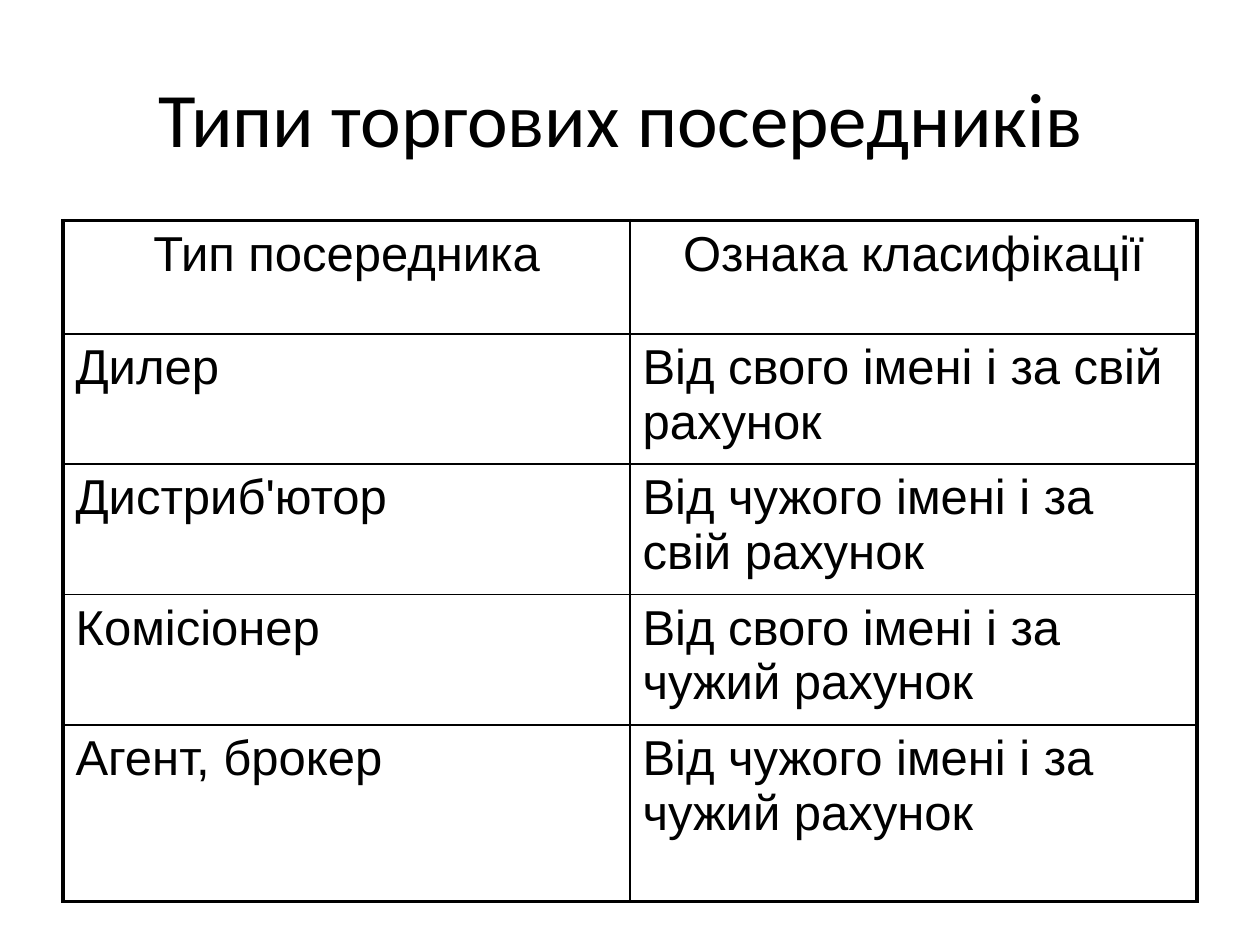
"""Build a slide with a table of trade intermediary types."""
from dataclasses import dataclass

from lxml import etree
from pptx import Presentation, util as u
from pptx.dml.color import RGBColor
from pptx.enum import text as t
from pptx.oxml import ns

WIDE, HIGH = u.Inches(10), u.Inches(7.5)
EDGE = 0.05
TOP = 1.75 / 7.5
COLORS = {"ink": "000000"}
THICK, THIN = u.Pt(2.25), u.Pt(1)


@dataclass
class Row:
    kind: str
    sign: str
    tall: float
    align: t.PP_ALIGN = t.PP_ALIGN.LEFT


ROWS = [
    Row("Тип посередника", "Ознака класифікації", 0.9, t.PP_ALIGN.CENTER),
    Row("Дилер", "Від свого імені і за свій рахунок", 0.97),
    Row("Дистриб'ютор", "Від чужого імені і за свій рахунок", 0.97),
    Row("Комісіонер", "Від свого імені і за чужий рахунок", 0.97),
    Row("Агент, брокер", "Від чужого імені і за чужий рахунок", 1.4),
]


def write(frame, words: str, size: int, face: str, align: t.PP_ALIGN) -> None:
    """Fill a text frame with one styled paragraph."""
    frame.text = words
    para = frame.paragraphs[0]
    para.alignment = align
    font = para.runs[0].font
    font.size, font.name = u.Pt(size), face
    font.color.rgb = RGBColor.from_string(COLORS["ink"])


def border(cell, sides: dict[str, bool]) -> None:
    """Rule the cell, thick on the outer sides of the table."""
    props = cell._tc.get_or_add_tcPr()
    for side, outer in sides.items():
        line = etree.SubElement(props, ns.qn(f"a:ln{side}"), w=str(THICK if outer else THIN))
        fill = etree.SubElement(line, ns.qn("a:solidFill"))
        etree.SubElement(fill, ns.qn("a:srgbClr"), val=COLORS["ink"])
    cell.fill.background()


def add_title(slide, words: str) -> None:
    """Add the centred slide title."""
    box = slide.shapes.add_textbox(
        int(WIDE * EDGE), int(HIGH * 0.04), int(WIDE * (1 - 2 * EDGE)), u.Inches(1.25))
    frame = box.text_frame
    frame.word_wrap = True
    frame.vertical_anchor = t.MSO_ANCHOR.MIDDLE
    write(frame, words, 44, "Calibri", t.PP_ALIGN.CENTER)


def add_grid(slide, rows: list[Row]) -> None:
    """Add the table with two equal columns."""
    total = u.Inches(sum(row.tall for row in rows))
    grid = slide.shapes.add_table(
        len(rows), 2, int(WIDE * EDGE), int(HIGH * TOP),
        int(WIDE * (1 - 2 * EDGE)), total).table
    grid.first_row = grid.horz_banding = False
    last = len(rows) - 1
    for i, row in enumerate(rows):
        grid.rows[i].height = u.Inches(row.tall)
        for j, words in enumerate((row.kind, row.sign)):
            cell = grid.cell(i, j)
            write(cell.text_frame, words, 28, "Arial", row.align)
            border(cell, {"L": j == 0, "R": j == 1, "T": i == 0, "B": i == last})


def main() -> None:
    """Create and save the deck."""
    deck = Presentation()
    deck.slide_width, deck.slide_height = WIDE, HIGH
    slide = deck.slides.add_slide(deck.slide_layouts[6])
    add_title(slide, "Типи торгових посередників ")
    add_grid(slide, ROWS)
    deck.save("out.pptx")


if __name__ == "__main__":
    main()
